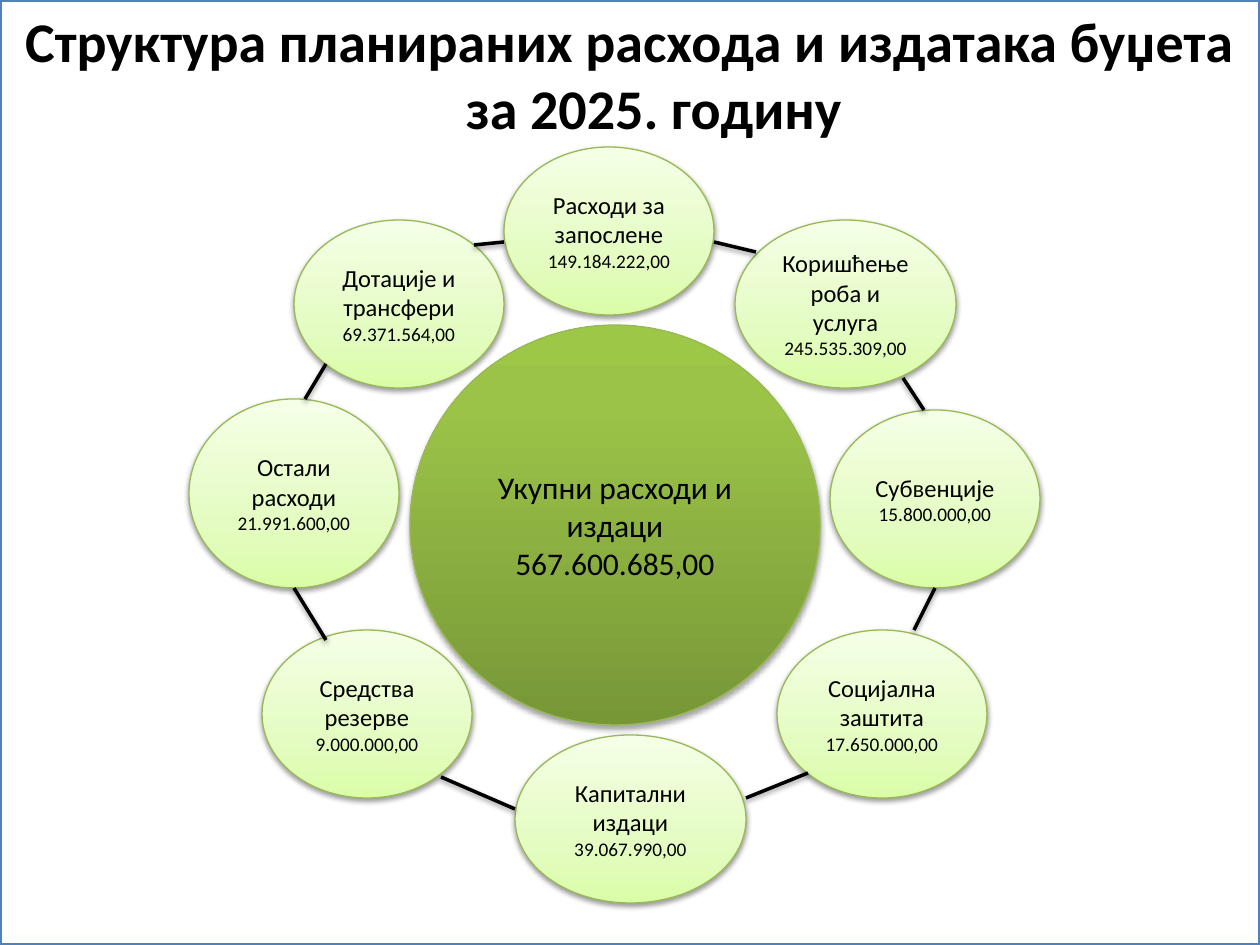
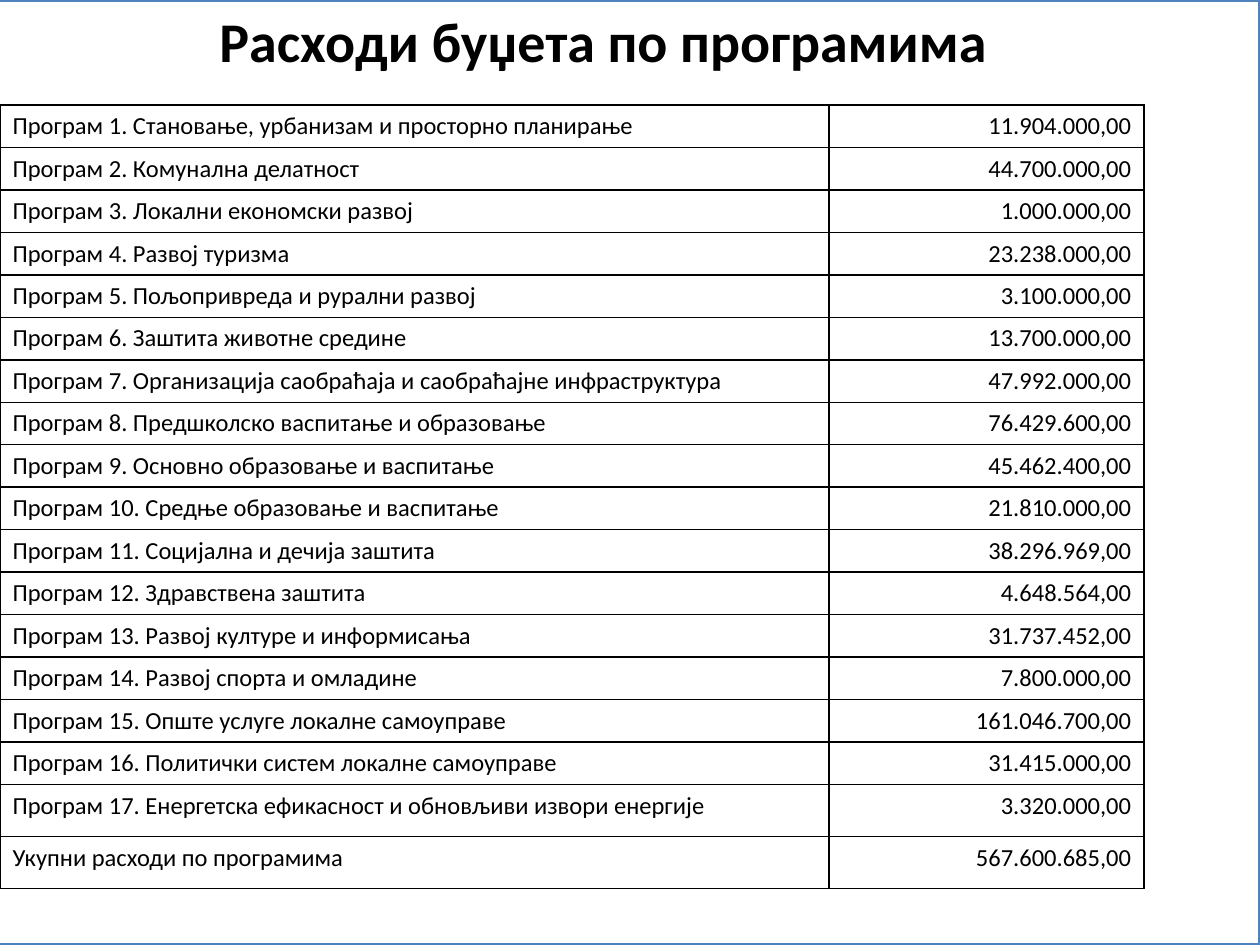
"""Builds two slides on planned budget expenditure: a ring of categories and a programme table."""
from pptx import Presentation
from pptx.dml.color import RGBColor
from pptx.enum.shapes import MSO_CONNECTOR, MSO_SHAPE
from pptx.enum.text import MSO_ANCHOR, PP_ALIGN
from pptx.oxml import parse_xml
from pptx.oxml.ns import nsdecls
from pptx.util import Emu, Pt

SLIDE_SIZE = (1260, 945)
COLORS = {
    "paper": "FFFFFF",
    "frame": "4F81BD",
    "ink": "000000",
    "rim": "98B955",
}
GRADIENTS = {
    "total": [(0, "779737"), (80, "9BC348"), (100, "9DC746")],
    "category": [(0, "DAFDA7"), (35, "E4FCC2"), (100, "F5FFE7")],
}
SHADOWS = {"total": (1.8, 35), "category": (1.6, 38)}
FONTS = {
    "title": {"size": Pt(32), "bold": True},
    "total": {"size": Pt(18), "bold": False},
    "label": {"size": Pt(14), "bold": False},
    "amount": {"size": Pt(11), "bold": False},
}

RING_TITLE = "Структура планираних расхода и издатака буџета за 2025. годину"
RING_FRAME = (0, 0, 1260, 945)
TOTAL = ("Укупни расходи и издаци 567.600.685,00", (410, 325, 410, 400))
CATEGORIES = [
    ("Расходи за запослене", "149.184.222,00", (504, 147, 210, 168)),
    ("Коришћење роба и услуга", "245.535.309,00", (735, 220, 221, 168)),
    ("Субвенције", "15.800.000,00", (830, 410, 210, 178)),
    ("Социјална заштита", "17.650.000,00", (777, 630, 210, 168)),
    ("Капитални издаци", "39.067.990,00", (515, 735, 231, 168)),
    ("Дотације и трансфери", "69.371.564,00", (294, 220, 210, 168)),
    ("Остали расходи", "21.991.600,00", (189, 399, 210, 189)),
    ("Средства резерве", "9.000.000,00", (262, 630, 210, 168)),
]
LINKS = [
    (474, 245, 504, 242),
    (714, 242, 756, 252),
    (903, 378, 924, 410),
    (935, 588, 914, 630),
    (808, 773, 746, 798),
    (441, 777, 515, 809),
    (294, 588, 326, 640),
    (326, 364, 305, 399),
]

PROGRAMS_TITLE = "Расходи буџета по програмима"
PROGRAMS_FRAME = (-53, 0, 1313, 945)
PROGRAMS = [
    ("Становање, урбанизам и просторно планирање", "11.904.000,00"),
    ("Комунална делатност", "44.700.000,00"),
    ("Локални економски развој", "1.000.000,00"),
    ("Развој туризма", "23.238.000,00"),
    ("Пољопривреда и рурални развој", "3.100.000,00"),
    ("Заштита животне средине", "13.700.000,00"),
    ("Организација саобраћаја и саобраћајне инфраструктура", "47.992.000,00"),
    ("Предшколско васпитање и образовање", "76.429.600,00"),
    ("Основно образовање и васпитање", "45.462.400,00"),
    ("Средње образовање и васпитање", "21.810.000,00"),
    ("Социјална и дечија заштита", "38.296.969,00"),
    ("Здравствена заштита", "4.648.564,00"),
    ("Развој културе и информисања", "31.737.452,00"),
    ("Развој спорта и омладине", "7.800.000,00"),
    ("Опште услуге локалне самоуправе", "161.046.700,00"),
    ("Политички систем локалне самоуправе", "31.415.000,00"),
    ("Енергетска ефикасност и обновљиви извори енергије", "3.320.000,00"),
]
PROGRAMS_TOTAL = ("Укупни расходи по програмима", "567.600.685,00")
TABLE_ORIGIN = (0, 105)
COLUMN_WIDTHS = (829, 315)
ROW_HEIGHT, TALL_ROW_HEIGHT, TALL_ROWS = 42, 52, 2


def px(*lengths):
    return [Emu(round(length * 914400 / 126)) for length in lengths]


def rgb(name):
    return RGBColor.from_string(COLORS[name])


def write(paragraph, text, font, align=PP_ALIGN.CENTER):
    paragraph.alignment = align
    run = paragraph.add_run()
    run.text = text
    for attribute, value in {"name": "Calibri", **FONTS[font]}.items():
        setattr(run.font, attribute, value)
    run.font.color.rgb = rgb("ink")


def effects(distance, opacity):
    return parse_xml(
        f'<a:effectLst {nsdecls("a")}><a:outerShdw blurRad="{Pt(3.1)}" dist="{Pt(distance)}" '
        f'dir="5400000" rotWithShape="0"><a:srgbClr val="{COLORS["ink"]}">'
        f'<a:alpha val="{opacity * 1000}"/></a:srgbClr></a:outerShdw></a:effectLst>')


def add_frame(slide, title, box):
    frame = slide.shapes.add_shape(MSO_SHAPE.RECTANGLE, *px(*box))
    frame.shadow.inherit = False
    frame.fill.solid()
    frame.fill.fore_color.rgb = rgb("paper")
    frame.line.color.rgb = rgb("frame")
    frame.line.width = Pt(2)
    frame.text_frame.vertical_anchor = MSO_ANCHOR.TOP
    heading = frame.text_frame.paragraphs[0]
    write(heading, title, "title")
    properties = heading._p.get_or_add_pPr()
    properties.set("marL", str(px(48)[0]))
    properties.set("indent", str(px(-48)[0]))
    properties.append(parse_xml(
        f'<a:spcBef {nsdecls("a")}><a:spcPct val="20000"/></a:spcBef>'))


def add_bubble(slide, box, look, lines):
    bubble = slide.shapes.add_shape(MSO_SHAPE.OVAL, *px(*box))
    bubble.line.color.rgb = rgb("rim")
    bubble.line.width = Pt(0.75)
    stops = "".join(
        f'<a:gs pos="{position * 1000}"><a:srgbClr val="{color}"/></a:gs>'
        for position, color in GRADIENTS[look])
    properties = bubble.element.spPr
    properties.insert(2, parse_xml(
        f'<a:gradFill {nsdecls("a")} rotWithShape="1"><a:gsLst>{stops}</a:gsLst>'
        f'<a:lin ang="16200000" scaled="0"/></a:gradFill>'))
    properties.append(effects(*SHADOWS[look]))
    body = bubble.text_frame
    body.word_wrap = True
    body.vertical_anchor = MSO_ANCHOR.MIDDLE
    for index, (text, font) in enumerate(lines):
        write(body.add_paragraph() if index else body.paragraphs[0], text, font)


def add_link(slide, ends):
    link = slide.shapes.add_connector(MSO_CONNECTOR.STRAIGHT, *px(*ends))
    link.line.color.rgb = rgb("ink")
    link.line.width = Pt(2)
    link.element.spPr.append(effects(*SHADOWS["category"]))


def add_programs(slide):
    rows = [(f"Програм {number}. {name}", amount)
            for number, (name, amount) in enumerate(PROGRAMS, 1)] + [PROGRAMS_TOTAL]
    heights = [ROW_HEIGHT] * (len(rows) - TALL_ROWS) + [TALL_ROW_HEIGHT] * TALL_ROWS
    programs = slide.shapes.add_table(
        len(rows), len(COLUMN_WIDTHS),
        *px(*TABLE_ORIGIN, sum(COLUMN_WIDTHS), sum(heights))).table
    programs.first_row = programs.horz_banding = False
    for column, width in zip(programs.columns, px(*COLUMN_WIDTHS)):
        column.width = width
    for row, height, texts in zip(programs.rows, px(*heights), rows):
        row.height = height
        for cell, text, align in zip(row.cells, texts, (PP_ALIGN.LEFT, PP_ALIGN.RIGHT)):
            write(cell.text_frame.paragraphs[0], text, "label", align)
            properties = cell._tc.get_or_add_tcPr()
            for side in "LRTB":
                properties.append(parse_xml(
                    f'<a:ln{side} {nsdecls("a")} w="{Pt(1)}"><a:solidFill>'
                    f'<a:srgbClr val="{COLORS["ink"]}"/></a:solidFill></a:ln{side}>'))
            cell.fill.background()


def main():
    deck = Presentation()
    deck.slide_width, deck.slide_height = px(*SLIDE_SIZE)
    blank = deck.slide_layouts[6]

    ring = deck.slides.add_slide(blank)
    add_frame(ring, RING_TITLE, RING_FRAME)
    total, total_box = TOTAL
    add_bubble(ring, total_box, "total", [(total, "total")])
    for name, amount, box in CATEGORIES:
        add_bubble(ring, box, "category", [(name, "label"), (amount, "amount")])
    for ends in LINKS:
        add_link(ring, ends)

    programs = deck.slides.add_slide(blank)
    add_frame(programs, PROGRAMS_TITLE, PROGRAMS_FRAME)
    add_programs(programs)

    deck.save("out.pptx")


if __name__ == "__main__":
    main()
